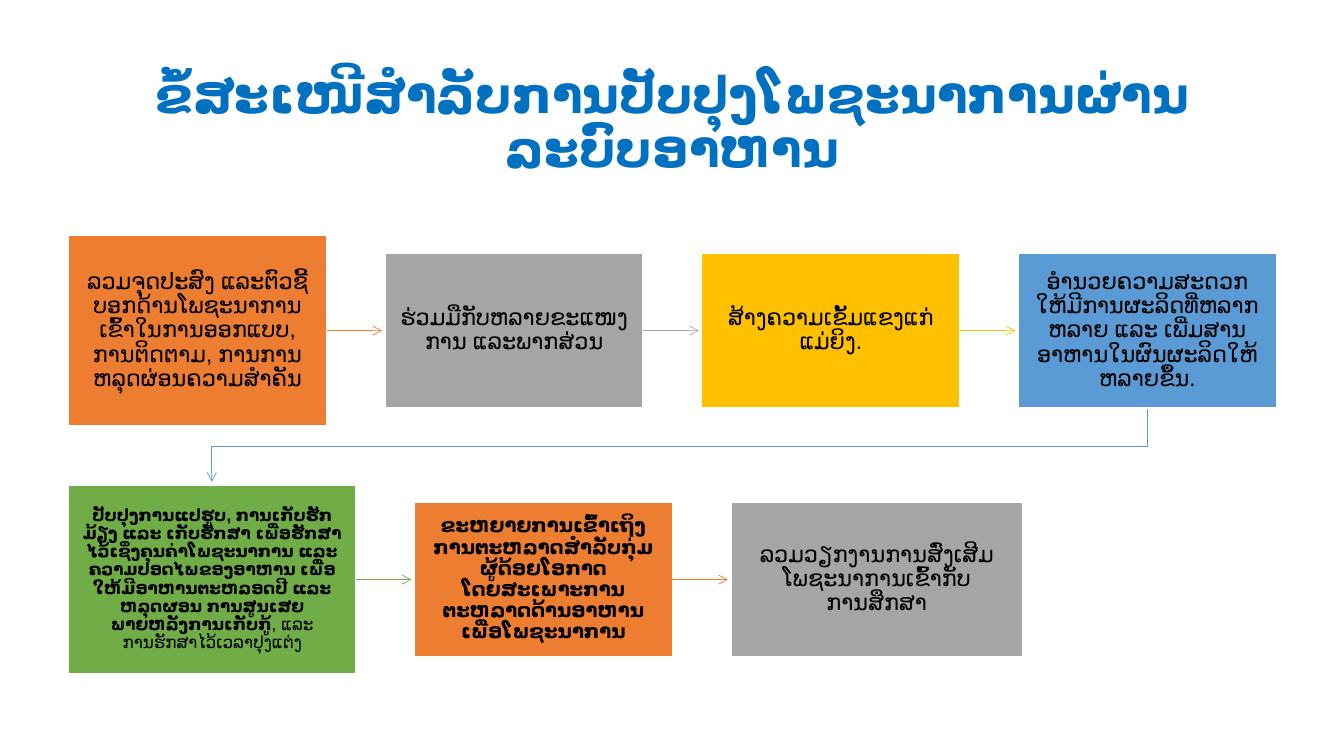
"""Build a slide with a two-row flow of proposals for better nutrition through food systems."""
from pptx import Presentation
from pptx.dml.color import RGBColor
from pptx.enum import shapes, text
from pptx.oxml.ns import qn
from pptx.util import Inches, Pt
from lxml import etree

BLACK = RGBColor(0x00, 0x00, 0x00)
WHITE = RGBColor(0xFF, 0xFF, 0xFF)
TITLE_BLUE = RGBColor(0x00, 0x70, 0xC0)
ORANGE = RGBColor(0xED, 0x7D, 0x31)
GRAY = RGBColor(0xA5, 0xA5, 0xA5)
GOLD = RGBColor(0xFF, 0xC0, 0x00)
BLUE = RGBColor(0x5B, 0x9B, 0xD5)
GREEN = RGBColor(0x70, 0xAD, 0x47)

FONT = "Arial"
LEFT, GAP, ARROW = 0.68, 0.58, 0.55
ROWS = [
    (3.28, [
        (ORANGE, 2.56, 1.89, 16, [("ລວມຈຸດປະສົງ ແລະຕົວຊີ້ບອກດ້ານໂພຊະນາການເຂົ້າໃນການອອກແບບ, ການຕິດຕາມ, ການການຫລຸດຜ່ອນຄວາມສຳຄັນ", False)]),
        (GRAY, 2.56, 1.53, 16, [("ຮ່ວມມືກັບຫລາຍຂະແໜງ ການ ແລະພາກສ່ວນ", False)]),
        (GOLD, 2.56, 1.53, 16, [("ສ້າງຄວາມເຂັ້ມແຂງແກ່ແມ່ຍິງ.", False)]),
        (BLUE, 2.56, 1.53, 16, [("ອຳນວຍຄວາມສະດວກໃຫ້ມີການຜະລິດທີ່ຫລາກຫລາຍ ແລະ ເພີ່ມສານອາຫານໃນຜົນຜະລິດໃຫ້ຫລາຍຂຶ້ນ.", False)]),
    ]),
    (5.75, [
        (GREEN, 2.85, 1.87, 12, [
            ("ປັບປຸງການແປຮູບ, ການເກັບຮັກມ້ຽງ ແລະ ເກັບຮັກສາ ເພື່ອຮັກສາໄວ້ເຊິ່ງຄຸນຄ່າໂພຊະນາການ ແລະ ຄວາມປອດໄພຂອງອາຫານ ເພື່ອໃຫ້ມີອາຫານຕະຫລອດປີ ແລະຫລຸດຜອນ ການສູນເສຍພາຍຫລັງການເກັບກູ້", True),
            (", ແລະ ການຮັກສາໄວ້ເວລາປຸງແຕ່ງ", False),
        ]),
        (ORANGE, 2.56, 1.53, 14, [("ຂະຫຍາຍການເຂົ້າເຖິງການຕະຫລາດສຳລັບກຸ່ມຜູ້ດ້ອຍໂອກາດໂດຍສະເພາະການຕະຫລາດດ້ານອາຫານເພື່ອໂພຊະນາການ", True)]),
        (GRAY, 2.89, 1.53, 16, [("ລວມວຽກງານການສົ່ງເສີມໂພຊະນາການເຂົ້າກັບການສຶກສາ", False)]),
    ]),
]


def write_text(shape, runs, size, color, margins):
    frame = shape.text_frame
    frame.word_wrap = True
    frame.vertical_anchor = text.MSO_ANCHOR.MIDDLE
    for side, margin in margins.items():
        setattr(frame, f"margin_{side}", Inches(margin))
    paragraph = frame.paragraphs[0]
    paragraph.alignment = text.PP_ALIGN.CENTER
    paragraph.line_spacing = 0.9
    for words, bold in runs:
        run = paragraph.add_run()
        run.text = words
        for name, value in {"name": FONT, "size": Pt(size), "bold": bold}.items():
            setattr(run.font, name, value)
        run.font.color.rgb = color
        complex_font = etree.SubElement(run._r.get_or_add_rPr(), qn("a:cs"))
        complex_font.set("typeface", FONT)


def style_arrow(arrow, color):
    arrow.line.color.rgb = color
    arrow.line.width = Pt(0.5)
    arrowhead = etree.SubElement(arrow.line._get_or_add_ln(), qn("a:tailEnd"))
    arrowhead.set("type", "arrow")
    if arrow._element.spPr.find(qn("a:effectLst")) is None:
        etree.SubElement(arrow._element.spPr, qn("a:effectLst"))


presentation = Presentation()
presentation.slide_width = Inches(13.33)
presentation.slide_height = Inches(7.5)
slide = presentation.slides.add_slide(presentation.slide_layouts[6])

title = slide.shapes.add_textbox(Inches(0.92), Inches(0.61), Inches(11.5), Inches(1.24))
write_text(title, [("ຂໍ້ສະເໜີສຳລັບການປັບປຸງໂພຊະນາການຜ່ານລະບົບອາຫານ", True)], 36, TITLE_BLUE,
           {"left": 0.1, "right": 0.1, "top": 0.05, "bottom": 0.05})

box_margins = dict.fromkeys(["left", "right", "top", "bottom"], 0.13)
for middle, steps in ROWS:
    left = LEFT
    for index, (color, width, height, size, runs) in enumerate(steps):
        box = slide.shapes.add_shape(
            shapes.MSO_SHAPE.RECTANGLE, Inches(left), Inches(middle - height / 2),
            Inches(width), Inches(height))
        box.shadow.inherit = False
        box.fill.solid()
        box.fill.fore_color.rgb = color
        box.line.color.rgb = WHITE
        box.line.width = Pt(1)
        write_text(box, runs, size, BLACK, box_margins)
        right = left + width
        if index < len(steps) - 1:
            arrow = slide.shapes.add_connector(
                shapes.MSO_CONNECTOR.STRAIGHT, Inches(right), Inches(middle),
                Inches(right + ARROW), Inches(middle))
            arrow.begin_connect(box, 3)
            style_arrow(arrow, color)
        left = right + GAP

turn_points = [(11.38, 4.43), (2.1, 4.43), (2.1, 4.78)]
builder = slide.shapes.build_freeform(Inches(11.38), Inches(4.06))
builder.add_line_segments([(Inches(x), Inches(y)) for x, y in turn_points], close=False)
turn_arrow = builder.convert_to_shape()
turn_arrow.shadow.inherit = False
turn_arrow.fill.background()
style_arrow(turn_arrow, BLUE)

presentation.save("out.pptx")
